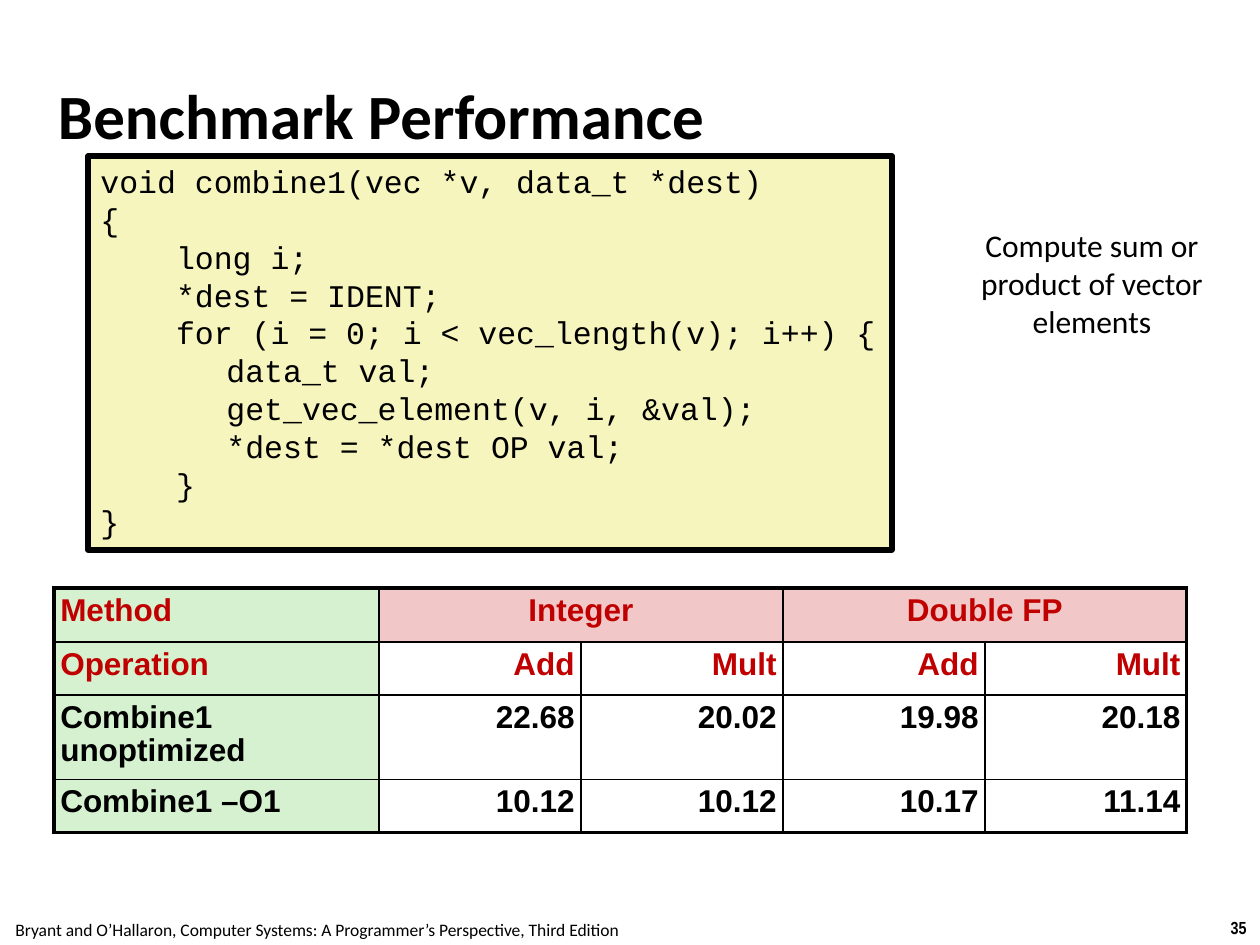
from lxml import etree
from pptx import Presentation
from pptx import util as u
from pptx.dml.color import RGBColor
from pptx.enum import shapes, text
from pptx.oxml import ns

PX = u.Inches(1) // 126
BLACK = RGBColor(0x00, 0x00, 0x00)
RED = RGBColor(0xC0, 0x00, 0x00)
CREAM = RGBColor(0xF6, 0xF5, 0xBD)
GREEN = RGBColor(0xD5, 0xF1, 0xCF)
PINK = RGBColor(0xF1, 0xC7, 0xC7)
LEFT, CENTER, RIGHT = text.PP_ALIGN.LEFT, text.PP_ALIGN.CENTER, text.PP_ALIGN.RIGHT

TITLE = "Benchmark Performance"
CODE = """void combine1(vec *v, data_t *dest)
{
    long i;
    *dest = IDENT;
    for (i = 0; i < vec_length(v); i++) {
\tdata_t val;
\tget_vec_element(v, i, &val);
\t*dest = *dest OP val;
    }
}"""
CODE_TABS = [1, 2.5]  # inches
CAPTION = "Compute sum or product of vector elements"
FOOTER = "Bryant and O’Hallaron, Computer Systems: A Programmer’s Perspective, Third Edition"
PAGE = "35"

RESULTS = [
    ["Method", "Integer", None, "Double FP", None],  # None: joined to the cell before
    ["Operation", "Add", "Mult", "Add", "Mult"],
    ["Combine1 unoptimized", "22.68", "20.02", "19.98", "20.18"],
    ["Combine1 –O1", "10.12", "10.12", "10.17", "11.14"],
]
HEADER_ROWS = 2
COLUMN_WIDTHS = [325] + [202] * 4
ROW_HEIGHTS = [54, 53, 84, 53]


def px(*lengths):
    return [u.Emu(n * PX) for n in lengths]


def style(paragraph, font, size, color=BLACK, bold=False, align=LEFT):
    paragraph.alignment = align
    for run in paragraph.runs:
        run.font.name, run.font.size = font, u.Pt(size)
        run.font.color.rgb, run.font.bold = color, bold


def add_text(slide, words, box, font, size, wrap=True, anchor=text.MSO_ANCHOR.TOP,
             inset=None, **look):
    frame = slide.shapes.add_textbox(*px(*box)).text_frame
    frame.word_wrap, frame.vertical_anchor = wrap, anchor
    if inset is not None:
        frame.margin_left = frame.margin_right = u.Emu(inset * PX)
        frame.margin_top = frame.margin_bottom = u.Emu(inset * PX)
    frame.text = words
    style(frame.paragraphs[0], font, size, **look)


def add_code(slide, box):
    panel = slide.shapes.add_shape(shapes.MSO_SHAPE.RECTANGLE, *px(*box))
    panel.shadow.inherit = False
    panel.fill.solid()
    panel.fill.fore_color.rgb = CREAM
    panel.line.color.rgb, panel.line.width = BLACK, u.Pt(3)
    frame = panel.text_frame
    frame.word_wrap, frame.vertical_anchor = False, text.MSO_ANCHOR.TOP
    frame.text = CODE
    for line in frame.paragraphs:
        style(line, "Courier New", 18)
        stops = etree.SubElement(line._p.get_or_add_pPr(), ns.qn("a:tabLst"))
        for stop in CODE_TABS:
            etree.SubElement(stops, ns.qn("a:tab"), pos=str(u.Inches(stop)), algn="l")


def set_borders(cell, widths):
    """Draw black cell borders; widths gives points in the order L, R, T, B."""
    properties = cell._tc.get_or_add_tcPr()
    for side, width in zip("LRTB", widths):
        line = etree.SubElement(properties, ns.qn(f"a:ln{side}"), w=str(u.Pt(width)))
        fill = etree.SubElement(line, ns.qn("a:solidFill"))
        etree.SubElement(fill, ns.qn("a:srgbClr"), val=str(BLACK))


def add_results(slide, left, top):
    rows, columns = len(RESULTS), len(COLUMN_WIDTHS)
    table = slide.shapes.add_table(
        rows, columns, *px(left, top, sum(COLUMN_WIDTHS), sum(ROW_HEIGHTS))).table
    table.first_row = table.horz_banding = False
    for column, width in zip(table.columns, px(*COLUMN_WIDTHS)):
        column.width = width
    for row, height in zip(table.rows, px(*ROW_HEIGHTS)):
        row.height = height

    for r, values in enumerate(RESULTS):
        for c, value in enumerate(values):
            cell = table.cell(r, c)
            joined = c + 1 < columns and values[c + 1] is None
            end = c + 1 if joined else c
            outer = [c == 0, end == columns - 1, r == 0, r == rows - 1]
            set_borders(cell, [2.25 if edge else 1 for edge in outer])
            fill = GREEN if c == 0 else PINK if r == 0 else None
            if fill is None:
                cell.fill.background()
            else:
                cell.fill.solid()
                cell.fill.fore_color.rgb = fill
            if value is None:
                continue
            if joined:
                cell.merge(table.cell(r, end))
            cell.margin_left = cell.margin_right = u.Inches(0.05)
            cell.margin_top = cell.margin_bottom = u.Inches(0.05)
            cell.text = value
            words = cell.text_frame.paragraphs[0]
            words.line_spacing = 0.95
            style(words, "Arial", 18, RED if r < HEADER_ROWS else BLACK, True,
                  LEFT if c == 0 else CENTER if r == 0 else RIGHT)


def main():
    deck = Presentation()
    deck.slide_width, deck.slide_height = px(1260, 945)
    slide = deck.slides.add_slide(deck.slide_layouts[6])
    add_text(slide, PAGE, (1217, 911, 43, 34), "Arial Narrow", 10, wrap=False,
             bold=True, align=CENTER)
    add_text(slide, FOOTER, (-3, 913, 640, 34), "Calibri", 10, wrap=False, align=CENTER)
    add_text(slide, TITLE, (53, 35, 1155, 158), "Calibri", 36, inset=5,
             anchor=text.MSO_ANCHOR.MIDDLE, bold=True)
    add_code(slide, (88, 156, 804, 394))
    add_text(slide, CAPTION, (924, 220, 336, 127), "Calibri", 18, align=CENTER)
    add_results(slide, 54, 588)
    deck.save("out.pptx")


if __name__ == "__main__":
    main()
